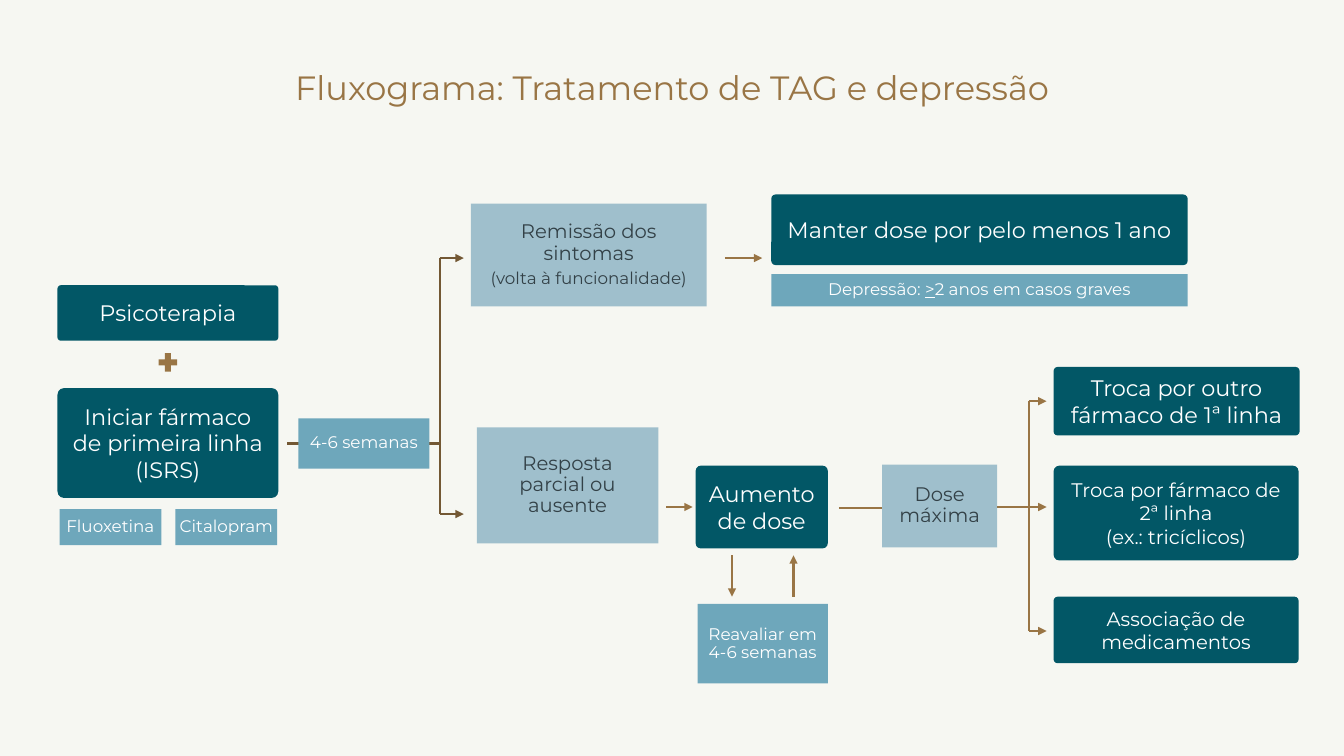
from dataclasses import dataclass

from lxml.etree import SubElement
from pptx import Presentation
from pptx.dml.color import RGBColor
from pptx.enum.shapes import MSO_CONNECTOR, MSO_SHAPE
from pptx.enum.text import MSO_ANCHOR, MSO_AUTO_SIZE, PP_ALIGN
from pptx.oxml.ns import qn
from pptx.util import Inches, Pt

BACKGROUND, BRONZE, BROWN = "F6F7F2", "997545", "735834"
TEAL, SKY, STEEL, SLATE, WHITE = "025766", "6EA7BB", "4988A7", "334147", "FFFFFF"


def color(value):
    """Turn a hex string into a colour."""
    return RGBColor.from_string(value)


def grid(cells):
    """Turn grid columns or rows, ten to the inch, into a length."""
    return Inches(cells / 10)


@dataclass
class BoxStyle:
    """Look of one family of boxes."""
    shape: MSO_SHAPE
    fill: str
    ink: str
    margins: tuple
    spacing: float
    opacity: int = 100


ACTION = BoxStyle(MSO_SHAPE.ROUNDED_RECTANGLE, TEAL, WHITE, (1, 0.5), 1.0)
OUTCOME = BoxStyle(MSO_SHAPE.RECTANGLE, STEEL, SLATE, (1.2, 0.1), 0.9, 50)
DETAIL = BoxStyle(MSO_SHAPE.RECTANGLE, SKY, WHITE, (0.1, 0.1), 0.9)


class Flowchart:
    """Draws flowchart elements on the current slide."""

    font = "Montserrat"

    def __init__(self, page):
        """Keep the page and colour its background."""
        self.page = page
        page.background.fill.solid()
        page.background.fill.fore_color.rgb = color(BACKGROUND)

    def set_text(self, frame, lines, ink, margins, spacing):
        """Fill a text frame with centred lines; underscores mark underlined spans."""
        frame.word_wrap = True
        frame.auto_size = MSO_AUTO_SIZE.NONE
        frame.vertical_anchor = MSO_ANCHOR.MIDDLE
        frame.margin_left = frame.margin_right = grid(margins[0])
        frame.margin_top = frame.margin_bottom = grid(margins[1])
        for index, (text, size) in enumerate(lines):
            para = frame.add_paragraph() if index else frame.paragraphs[0]
            para.alignment = PP_ALIGN.CENTER
            para.line_spacing = spacing
            para.space_before = Pt(4 if index and spacing < 1 else 0)
            for part, words in enumerate(text.split("_")):
                span = para.add_run()
                span.text = words
                span.font.name = self.font
                span.font.size = Pt(size)
                span.font.color.rgb = color(ink)
                if part % 2:
                    span.font.underline = True

    def title(self, text, left, top, width, height):
        """Place the title placeholder and its text."""
        box = self.page.shapes.title
        box.left, box.top = grid(left), grid(top)
        box.width, box.height = grid(width), grid(height)
        self.set_text(box.text_frame, [(text, 24)], BRONZE, (0, 0), 0.9)

    def shape(self, kind, fill, left, top, width, height):
        """Add a plain filled shape."""
        box = self.page.shapes.add_shape(kind, grid(left), grid(top), grid(width), grid(height))
        box.shadow.inherit = False
        box.fill.solid()
        box.fill.fore_color.rgb = color(fill)
        box.line.fill.background()
        return box

    def box(self, style, place, *lines):
        """Add a box of the given style with its text."""
        box = self.shape(style.shape, style.fill, *place)
        if style.shape == MSO_SHAPE.ROUNDED_RECTANGLE:
            box.adjustments[0] = 0.06
        if style.opacity < 100:
            tint = box._element.spPr.find(f"{qn('a:solidFill')}/{qn('a:srgbClr')}")
            SubElement(tint, qn("a:alpha"), val=str(style.opacity * 1000))
        self.set_text(box.text_frame, lines, style.ink, style.margins, style.spacing)

    def line(self, start, end, ink=BRONZE, arrow=False):
        """Add a straight line, with an arrowhead if asked."""
        link = self.page.shapes.add_connector(
            MSO_CONNECTOR.STRAIGHT, *map(grid, start), *map(grid, end))
        link.line.color.rgb = color(ink)
        link.line.width = Pt(1.5)
        properties = link._element.spPr
        if arrow:
            SubElement(properties.find(qn("a:ln")), qn("a:tailEnd"), type="triangle")
        SubElement(properties, qn("a:effectLst"))

    def fork(self, column, rows, tip, ink=BRONZE):
        """Add a vertical trunk with an arrow at each row."""
        self.line((column, rows[0]), (column, rows[-1]), ink)
        for row in rows:
            self.line((column, row), (tip, row), ink, arrow=True)


def main():
    """Build the treatment flowchart."""
    deck = Presentation()
    deck.slide_width, deck.slide_height = Inches(13.33), Inches(7.5)
    chart = Flowchart(deck.slides.add_slide(deck.slide_layouts[5]))
    chart.title("Fluxograma: Tratamento de TAG e depressão", 15, 3, 103.3, 11.8)

    chart.line((28.5, 44), (43.6, 44), BROWN)
    chart.line((83.2, 50.4), (87.5, 50.4))
    chart.line((98.9, 50.3), (102.1, 50.3))
    chart.fork(43.6, (25.6, 51), 46, BROWN)
    chart.fork(102.1, (39.8, 50.3, 62.6), 103.8)
    for start, end in (
        ((71.9, 25.6), (75.6, 25.6)),
        ((66.1, 50.3), (68.7, 50.3)),
        ((72.6, 55.1), (72.6, 59.2)),
        ((78.7, 59.2), (78.7, 55.1)),
    ):
        chart.line(start, end, arrow=True)

    chart.shape(MSO_SHAPE.MATH_PLUS, BRONZE, 15.4, 34.7, 2.5, 2.5)
    for style, place, *lines in (
        (ACTION, (5.7, 28.3, 21.9, 5.5), ("Psicoterapia", 16)),
        (ACTION, (5.7, 38.5, 21.9, 10.9),
         ("Iniciar fármaco de primeira linha", 16), ("(ISRS)", 16)),
        (DETAIL, (5.9, 50.5, 10.1, 3.6), ("Fluoxetina", 12)),
        (DETAIL, (17.4, 50.5, 10.1, 3.6), ("Citalopram", 12)),
        (DETAIL, (29.6, 41.5, 13, 5), ("4-6 semanas", 12)),
        (OUTCOME, (46.7, 20.2, 23.4, 10.2),
         ("Remissão dos sintomas", 14), ("(volta à funcionalidade)", 12)),
        (ACTION, (76.5, 19.3, 41.3, 7), ("Manter dose por pelo menos 1 ano", 16)),
        (DETAIL, (76.5, 27.2, 41.3, 3.2), ("Depressão: _>_2 anos em casos graves", 12)),
        (OUTCOME, (47.3, 42.4, 18, 11.5), ("Resposta parcial ou ausente", 14)),
        (ACTION, (69, 46.2, 13.1, 8.2), ("Aumento de dose", 16)),
        (DETAIL, (69.2, 59.9, 12.9, 7.9), ("Reavaliar em 4-6 semanas", 12)),
        (OUTCOME, (87.5, 46.1, 11.4, 8.2), ("Dose máxima", 14)),
        (ACTION, (104.5, 36.4, 24.4, 6.8), ("Troca por outro fármaco de 1ª linha", 16)),
        (ACTION, (104.5, 46.2, 24.3, 9.4),
         ("Troca por fármaco de 2ª linha", 14), ("(ex.: tricíclicos)", 14)),
        (ACTION, (104.5, 59.2, 24.3, 6.6), ("Associação de medicamentos", 14)),
    ):
        chart.box(style, place, *lines)
    deck.save("out.pptx")


if __name__ == "__main__":
    main()
